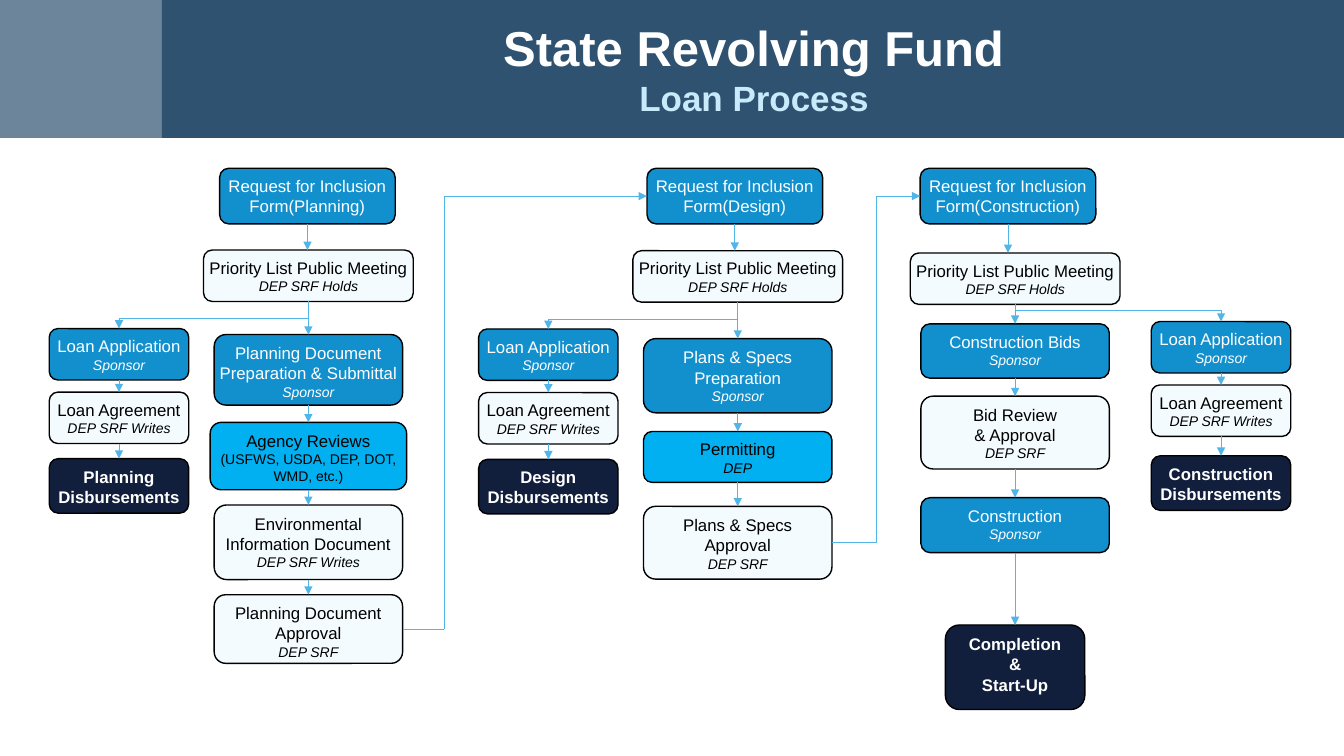
from lxml import etree
from pptx import Presentation
from pptx.dml.color import RGBColor
from pptx.enum.shapes import MSO_CONNECTOR, MSO_SHAPE
from pptx.enum.text import MSO_ANCHOR, MSO_AUTO_SIZE, PP_ALIGN
from pptx.oxml.ns import qn
from pptx.util import Pt

RECTANGLE, ROUNDED = MSO_SHAPE.RECTANGLE, MSO_SHAPE.ROUNDED_RECTANGLE
STRAIGHT, ELBOW = MSO_CONNECTOR.STRAIGHT, MSO_CONNECTOR.ELBOW
CENTER, TOP_ANCHOR = PP_ALIGN.CENTER, MSO_ANCHOR.TOP
GROW = MSO_AUTO_SIZE.SHAPE_TO_FIT_TEXT
TOP, LEFT, BOTTOM, RIGHT = range(4)
TITLE_ONLY = 5

BAND, ARROW = "2E5270", "52B5E8"
# Fill and font of each kind of step
SPONSOR = ("1290CE", {"color": "FFFFFF"})
STATE = ("F4FBFE", {"color": "000000"})
AGENCY = ("00B0F0", {"color": "000000"})
MILESTONE = ("121F3C", {"color": "FFFFFF", "bold": True})
NOTE = {"size": Pt(10), "italic": True}
PLAIN_NOTE = {"size": Pt(10)}

STEP_WIDTH, LOAN_WIDTH = 134.6, 99.6

# Steps: top, height, width, kind, main lines, note lines, note format
PHASES = [
    {"stage": "Planning", "request_center": 219.6, "center": 220.3,
     "meeting_top": 178.6, "branch_y": 227.5,
     "loan_center": 85, "loan_tops": (234.7, 280.1, 327.6),
     "steps": [
         (239, 50.4, STEP_WIDTH, SPONSOR,
          ["Planning Document", "Preparation & Submittal"], ["Sponsor"], NOTE),
         (301.7, 48.2, 140.4, AGENCY, ["Agency Reviews"],
          ["(USFWS, USDA, DEP, DOT,", "WMD, etc.)"], PLAIN_NOTE),
         (360.7, 53.3, STEP_WIDTH, STATE,
          ["Environmental", "Information Document"], ["DEP SRF Writes"], NOTE),
         (424.8, 49, STEP_WIDTH, STATE,
          ["Planning Document", "Approval"], ["DEP SRF"], NOTE)]},
    {"stage": "Design", "request_center": 524.9, "center": 527,
     "meeting_top": 179.1, "branch_y": 227.9,
     "loan_center": 391.7, "loan_tops": (235, 280.4, 328.1),
     "steps": [
         (241.9, 53, STEP_WIDTH, SPONSOR,
          ["Plans & Specs", "Preparation"], ["Sponsor"], NOTE),
         (308.2, 36.4, STEP_WIDTH, AGENCY, ["Permitting"], ["DEP"], NOTE),
         (361.7, 52, STEP_WIDTH, STATE,
          ["Plans & Specs", "Approval"], ["DEP SRF"], NOTE)]},
    {"stage": "Construction", "request_center": 720, "center": 725.1,
     "meeting_top": 180.7, "branch_y": 221.8,
     "loan_center": 872.2, "loan_tops": (229.7, 275, 325.6),
     "steps": [
         (231.3, 38.8, STEP_WIDTH, SPONSOR,
          ["Construction Bids"], ["Sponsor"], NOTE),
         (283, 52, STEP_WIDTH, STATE,
          ["Bid Review", "& Approval"], ["DEP SRF"], NOTE),
         (355.5, 39.3, STEP_WIDTH, SPONSOR, ["Construction"], ["Sponsor"], NOTE),
         (446.4, 60.4, LOAN_WIDTH, MILESTONE,
          ["Completion", "&", "Start-Up"], [], NOTE)]},
]


def rgb(hex_color):
    return RGBColor.from_string(hex_color)


def format_font(font, values):
    for name, value in values.items():
        if name == "color":
            font.color.rgb = rgb(value)
        else:
            setattr(font, name, value)


def write_lines(frame, lines):
    """Write one centred paragraph per (text, font values) pair."""
    for index, (text, values) in enumerate(lines):
        para = frame.paragraphs[0] if index == 0 else frame.add_paragraph()
        para.alignment = CENTER
        span = para.add_run()
        span.text = text
        format_font(span.font, {"name": "Arial", **values})


def add_band(slide, left, width, opacity=None):
    band = slide.shapes.add_shape(RECTANGLE, Pt(left), 0, Pt(width), Pt(98.6))
    band.shadow.inherit = False
    band.fill.solid()
    band.fill.fore_color.rgb = rgb(BAND)
    band.line.fill.background()
    if opacity:
        color = next(band.element.spPr.iter(qn("a:srgbClr")))
        etree.SubElement(color, qn("a:alpha"), val=str(opacity * 1000))


def format_title(slide):
    title = slide.shapes.title
    slide.shapes.element.append(title.element)  # in front of the bands
    title.left, title.top, title.width, title.height = map(
        Pt, (130.3, 20.9, 816.5, 68.4))
    frame = title.text_frame
    frame.word_wrap = True
    frame.vertical_anchor = TOP_ANCHOR
    frame.auto_size = GROW
    write_lines(frame, [
        ("State Revolving Fund", {"size": Pt(35), "bold": True, "color": "FFFFFF"}),
        ("Loan Process", {"size": Pt(25), "bold": True, "color": "C8EAFB"})])
    for para in frame.paragraphs:
        para.line_spacing = Pt(30)
        para.space_before = Pt(0)


def add_box(slide, center, top, height, width, kind, main, notes=(), note=NOTE):
    fill, font = kind
    box = slide.shapes.add_shape(
        ROUNDED, Pt(center - width / 2), Pt(top), Pt(width), Pt(height))
    box.shadow.inherit = False
    box.fill.solid()
    box.fill.fore_color.rgb = rgb(fill)
    box.line.color.rgb = rgb("000000")
    box.line.width = Pt(1)
    frame = box.text_frame
    frame.word_wrap = False
    frame.vertical_anchor = TOP_ANCHOR
    write_lines(frame, [(text, {"size": Pt(12), **font}) for text in main]
                + [(text, {**font, **note}) for text in notes])
    return box


def add_line(slide, start=(0, 0), end=(0, 0), kind=STRAIGHT, arrow=True):
    line = slide.shapes.add_connector(kind, *map(Pt, start + end))
    line.line.color.rgb = rgb(ARROW)
    line.line.width = Pt(0.5)
    if arrow:
        etree.SubElement(line.get_or_add_ln(), qn("a:tailEnd"), type="triangle")
    etree.SubElement(line.element.spPr, qn("a:effectLst"))
    return line


def join(slide, first, second, sides=(BOTTOM, TOP), kind=STRAIGHT):
    line = add_line(slide, kind=kind)
    line.begin_connect(first, sides[0])
    line.end_connect(second, sides[1])


def add_chain(slide, boxes):
    for first, second in zip(boxes, boxes[1:]):
        join(slide, first, second)


def add_phase(slide, phase):
    """Draw one phase and return its first and last box."""
    # Request and public meeting
    center, request_center = phase["center"], phase["request_center"]
    request = add_box(slide, request_center, 120.2, 39.8, 125.5, SPONSOR,
                      ["Request for Inclusion", f"Form({phase['stage']})"])
    meeting = add_box(slide, center, phase["meeting_top"], 36.7, 149.8, STATE,
                      ["Priority List Public Meeting"], ["DEP SRF Holds"])
    drop = add_line(slide, (request_center, 160),
                    (request_center, phase["meeting_top"]))
    drop.begin_connect(request, BOTTOM)

    # Main steps
    steps = [add_box(slide, center, *step) for step in phase["steps"]]
    add_chain(slide, [meeting, *steps])

    # Loan steps on the side branch
    loan_center, loan_tops = phase["loan_center"], phase["loan_tops"]
    loan_steps = [
        (36.7, SPONSOR, ["Loan Application"], ["Sponsor"]),
        (36.7, STATE, ["Loan Agreement"], ["DEP SRF Writes"]),
        (39, MILESTONE, [phase["stage"], "Disbursements"], [])]
    add_chain(slide, [
        add_box(slide, loan_center, top, height, LOAN_WIDTH, *content)
        for top, (height, *content) in zip(loan_tops, loan_steps)])
    branch = add_line(slide, (center, phase["branch_y"]),
                      (loan_center, loan_tops[0]), ELBOW)
    branch.element.spPr.find(qn("a:prstGeom")).set("prst", "bentConnector2")
    return request, steps[-1]


def main():
    deck = Presentation()
    deck.slide_width, deck.slide_height = Pt(960), Pt(540)
    slide = deck.slides.add_slide(deck.slide_layouts[TITLE_ONLY])

    # Header
    add_band(slide, 115.7, 844.3)
    add_band(slide, 0, 115.7, opacity=70)
    format_title(slide)

    # Phases
    planning, design, construction = [add_phase(slide, phase) for phase in PHASES]

    # Planning approval to design request
    turn_x, request_y, approval_y = 317.2, 140.1, 449.3
    leave = add_line(slide, (287.6, approval_y), (turn_x, approval_y), arrow=False)
    leave.begin_connect(planning[1], RIGHT)
    add_line(slide, (turn_x, request_y), (turn_x, approval_y), arrow=False)
    arrive = add_line(slide, (turn_x, request_y), (462.2, request_y))
    arrive.end_connect(design[0], LEFT)

    # Design approval to construction request
    join(slide, design[1], construction[0], (RIGHT, LEFT), ELBOW)

    deck.save("out.pptx")


if __name__ == "__main__":
    main()
